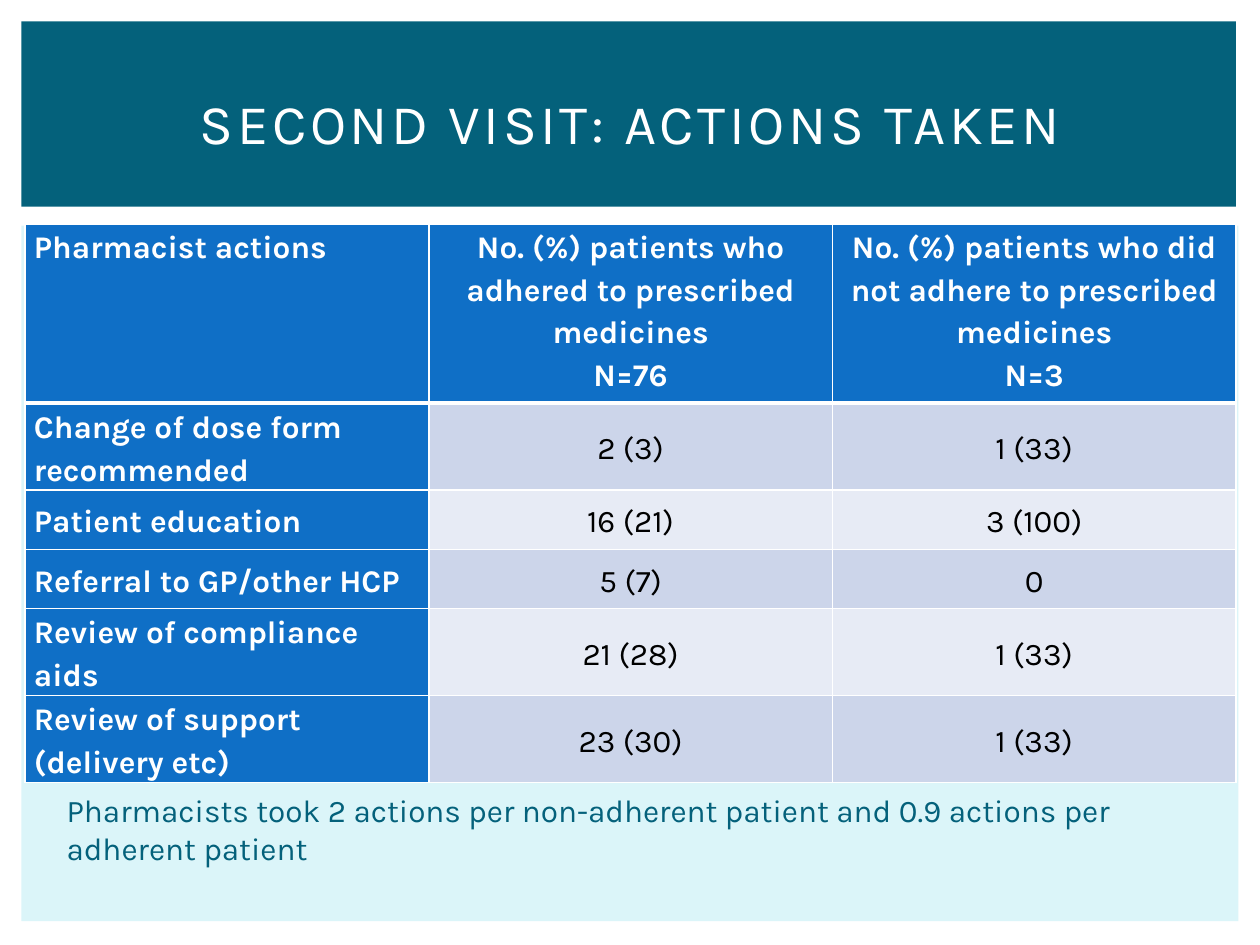
from lxml.etree import SubElement
from pptx import Presentation
from pptx.dml.color import RGBColor
from pptx.enum.shapes import MSO_SHAPE as Shape
from pptx.enum.text import MSO_ANCHOR as Anchor, PP_ALIGN as Align
from pptx.oxml.ns import qn
from pptx.util import Inches, Pt

FONT = "Karla"
WHITE, BLACK, TEAL, BLUE, PALE = "FFFFFF", "000000", "04617B", "0F6FC6", "DBF5F9"
BANDS = ["CCD5EA", "E7EBF5"]
HEADER = [
    "Pharmacist actions",
    "No. (%) patients who adhered to prescribed medicines\nN=76",
    "No. (%) patients who did not adhere to prescribed medicines\nN=3",
]
ACTIONS = [
    ["Change of dose form recommended", "2 (3)", "1 (33)"],
    ["Patient education", "16 (21)", "3 (100)"],
    ["Referral to GP/other HCP", "5 (7)", "0"],
    ["Review of compliance aids", "21 (28)", "1 (33)"],
    ["Review of support (delivery etc)", "23 (30)", "1 (33)"],
]


def color(value):
    return RGBColor.from_string(value)


def format_text(paragraph, size, text_color, align=Align.LEFT, bold=False):
    paragraph.alignment = align
    font = paragraph.font
    font.name, font.size, font.bold = FONT, Pt(size), bold
    font.color.rgb = color(text_color)


def add_panel(slide, box, fill):
    panel = slide.shapes.add_shape(Shape.RECTANGLE, *map(Inches, box))
    panel.shadow.inherit = False
    panel.fill.solid()
    panel.fill.fore_color.rgb = color(fill)
    panel.line.fill.background()


def place_title(slide, box, text):
    title = slide.shapes.title
    title.left, title.top, title.width, title.height = map(Inches, box)
    title.element.getparent().append(title.element)
    frame = title.text_frame
    frame.text = text
    frame.vertical_anchor = Anchor.MIDDLE
    format_text(frame.paragraphs[0], 32, WHITE, Align.CENTER)
    for properties in title.element.iter(qn("a:defRPr")):
        properties.set("spc", "200")


def add_note(slide, box, text):
    frame = slide.shapes.add_textbox(*map(Inches, box)).text_frame
    frame.word_wrap = True
    frame.text = text
    format_text(frame.paragraphs[0], 18, TEAL)


def add_borders(cell, bottom_width):
    properties = cell._tc.get_or_add_tcPr()
    widths = {"a:lnL": 1, "a:lnR": 1, "a:lnT": 1, "a:lnB": bottom_width}
    for tag, width in widths.items():
        line = SubElement(properties, qn(tag), w=str(Pt(width)))
        fill = SubElement(line, qn("a:solidFill"))
        SubElement(fill, qn("a:srgbClr"), val=WHITE)


def format_cell(cell, text, row, column):
    is_header, is_label = row == 0, row == 0 or column == 0
    cell.text = text
    cell.margin_left = cell.margin_right = Inches(0.07)
    cell.margin_top = cell.margin_bottom = 0
    cell.vertical_anchor = Anchor.TOP if is_header else Anchor.MIDDLE
    for paragraph in cell.text_frame.paragraphs:
        align = Align.CENTER if column else Align.LEFT
        format_text(paragraph, 18, WHITE if is_label else BLACK, align, is_label)
        paragraph.line_spacing = 1.15
    add_borders(cell, 3 if is_header else 1)
    cell.fill.solid()
    cell.fill.fore_color.rgb = color(BLUE if is_label else BANDS[(row - 1) % 2])


def add_actions_table(slide, box, header_height, row_height):
    rows = [HEADER] + ACTIONS
    frame = slide.shapes.add_table(len(rows), len(HEADER), *map(Inches, box))
    table = frame.table
    for column in table.columns:
        column.width = Inches(box[2] / len(HEADER))
    for row, texts in enumerate(rows):
        table.rows[row].height = Inches(row_height if row else header_height)
        for column, text in enumerate(texts):
            format_cell(table.cell(row, column), text, row, column)


def main():
    presentation = Presentation()
    presentation.slide_width, presentation.slide_height = Inches(10), Inches(7.5)
    slide = presentation.slides.add_slide(presentation.slide_layouts[5])
    add_panel(slide, (0.17, 1.79, 9.66, 5.52), PALE)
    add_panel(slide, (0.17, 0.17, 9.64, 1.47), TEAL)
    place_title(slide, (0.42, 0.39, 9.17, 1.15), "SECOND VISIT: ACTIONS TAKEN")
    add_note(
        slide,
        (0.43, 6.23, 9.13, 0.71),
        "Pharmacists took 2 actions per non-adherent patient "
        "and 0.9 actions per adherent patient",
    )
    add_actions_table(slide, (0.2, 1.78, 9.61, 3.77), 1.42, 0.47)
    presentation.save("out.pptx")


if __name__ == "__main__":
    main()
